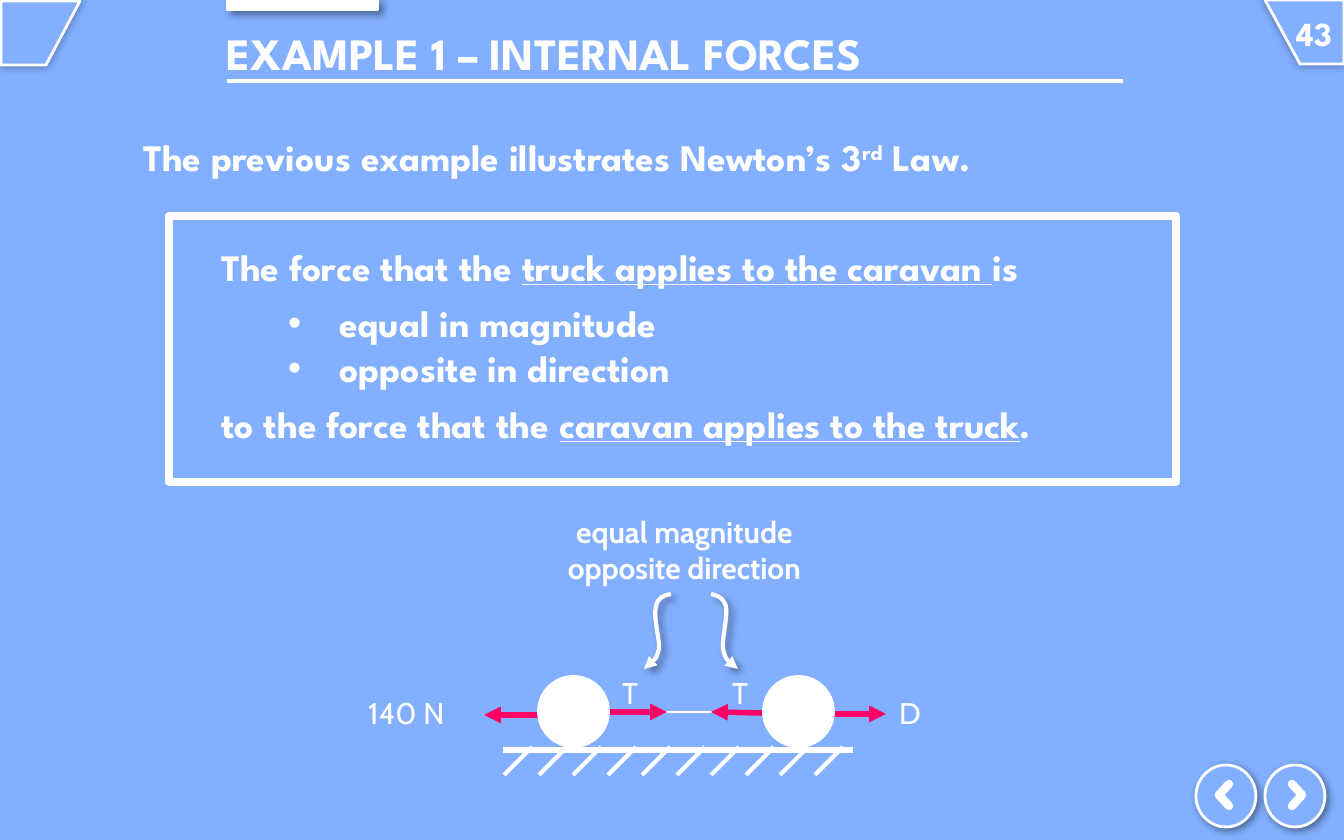
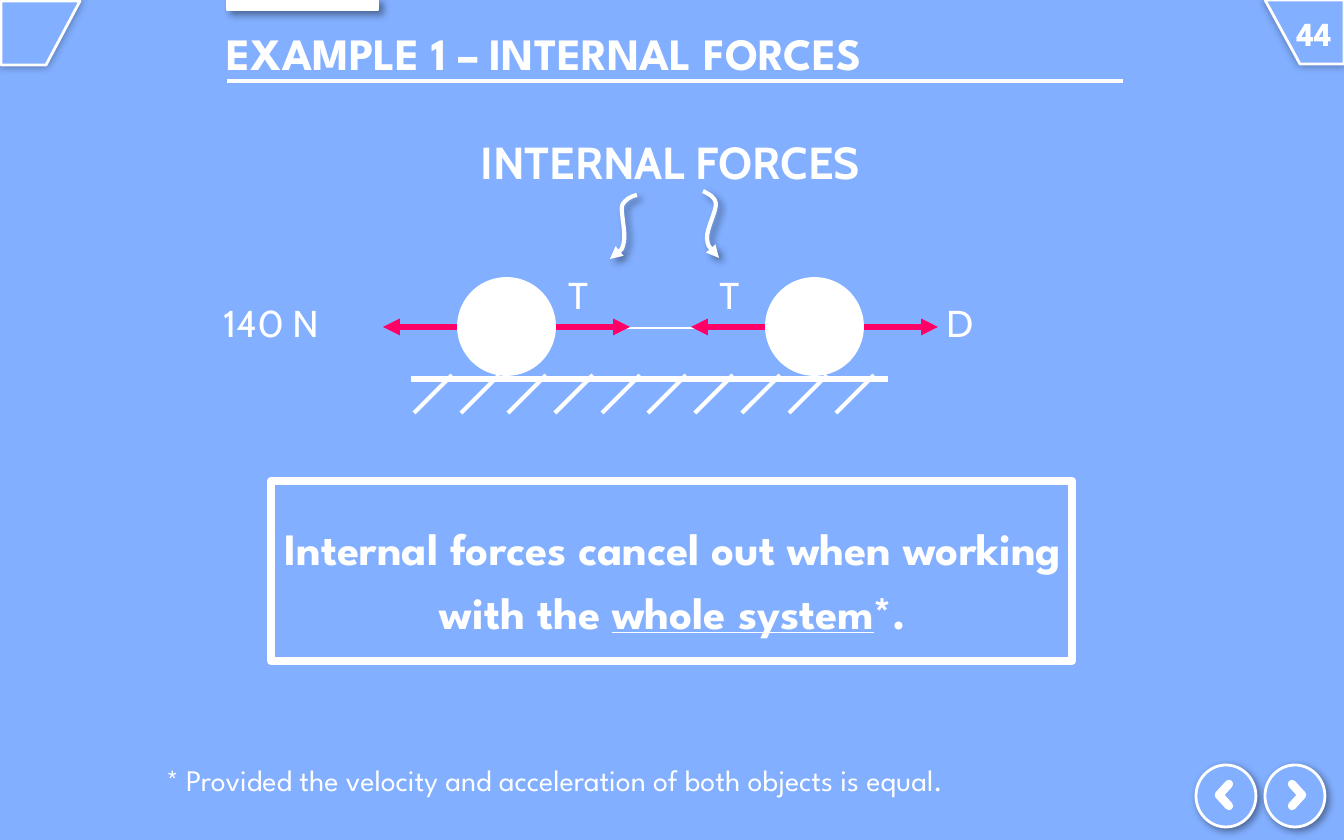
import dataclasses

import lxml.etree
import pptx
import pptx.dml.color
import pptx.enum.shapes
import pptx.enum.text
import pptx.oxml.ns
import pptx.util

PX = 914400 / 134.4
Pt = pptx.util.Pt
qn = pptx.oxml.ns.qn
Kind = pptx.enum.shapes.MSO_SHAPE
Align = pptx.enum.text.PP_ALIGN
Anchor = pptx.enum.text.MSO_ANCHOR
STRAIGHT = pptx.enum.shapes.MSO_CONNECTOR.STRAIGHT


@dataclasses.dataclass(frozen=True)
class Theme:
    sky = pptx.dml.color.RGBColor.from_string("82AFFF")
    white = pptx.dml.color.RGBColor.from_string("FFFFFF")
    force = pptx.dml.color.RGBColor.from_string("FF0066")
    heading = "League Spartan"
    label = "Cabin"
    title = 24
    body = 20
    number = 18
    note = 16


theme = Theme()


def finish(shape, width, line=theme.white, fill=None, shadow=None, arrow=False):
    shape.line.color.rgb = line
    shape.line.width = Pt(width)
    if fill is not None:
        shape.fill.solid()
        shape.fill.fore_color.rgb = fill
    elif hasattr(shape, "fill"):
        shape.fill.background()
    properties = shape._element.spPr
    outline = properties.find(qn("a:ln"))
    if arrow:
        lxml.etree.SubElement(outline, qn("a:tailEnd"), type="triangle")
    effects = lxml.etree.SubElement(properties, qn("a:effectLst"))
    if shadow:
        blur, distance, angle = shadow
        outer = lxml.etree.SubElement(
            effects, qn("a:outerShdw"), blurRad=str(blur * 12700),
            dist=str(distance * 12700), dir=str(angle * 60000), algn="tl", rotWithShape="0")
        black = lxml.etree.SubElement(outer, qn("a:srgbClr"), val="000000")
        lxml.etree.SubElement(black, qn("a:alpha"), val="40000")
    return outline


def write(page, bounds, paragraphs, size, name=theme.heading, bold=True, inset=True,
          anchor=Anchor.TOP, **layout):
    box = page.shapes.add_textbox(*(round(value * PX) for value in bounds))
    frame = box.text_frame
    frame.word_wrap = True
    frame.vertical_anchor = anchor
    if not inset:
        for side in ("left", "top", "right", "bottom"):
            setattr(frame, f"margin_{side}", 0)
    for index, (spans, style) in enumerate(paragraphs):
        para = frame.add_paragraph() if index else frame.paragraphs[0]
        style = {**layout, **style}
        if style.pop("bullet", False):
            settings = para._p.get_or_add_pPr()
            settings.set("marL", str(round(118 * PX)))
            settings.set("indent", str(round(-51 * PX)))
            lxml.etree.SubElement(settings, qn("a:buFont"), typeface="Arial")
            lxml.etree.SubElement(settings, qn("a:buChar"), char="•")
        for key, value in style.items():
            setattr(para, key, value)
        for text, mark in spans:
            span = para.add_run()
            span.text = text
            looks = {"name": name, "size": Pt(size), "bold": bold,
                     "underline": mark == "underline"}
            for key, value in looks.items():
                setattr(span.font, key, value)
            span.font.color.rgb = theme.white
            if mark == "superscript":
                span._r.get_or_add_rPr().set("baseline", "30000")


diagrams = [
    {
        "number": "43",
        "frame": (169, 216, 1007, 266),
        "ground": (503, 853, 750),
        "hatching": (532, 747, 28, 311),
        "rope": (609, 763, 712),
        "forces": [(539, 715, 484, 715), (832, 714, 886, 714),
                   (610, 712, 667, 712), (762, 713, 711, 712)],
        "bodies": [(538, 676), (763, 676)],
        "diameter": 71,
        "labels": [("140 N", 355, 688, 130), ("D", 886, 688, 51),
                   ("T", 609, 668, 47), ("T", 719, 668, 47)],
        "label_size": theme.note,
        "pointers": [
            [(671, 594), (664, 595), (657, 598), (656, 607), (653, 616), (660, 640),
             (659, 649), (656, 660), (650, 665), (644, 669)],
            [(711, 594), (716, 595), (723, 597), (726, 606), (728, 616), (722, 638),
             (723, 649), (726, 660), (731, 665), (738, 669)],
        ],
    },
    {
        "number": "44",
        "frame": (271, 481, 801, 180),
        "ground": (411, 888, 379),
        "hatching": (452, 375, 38, 422),
        "rope": (556, 766, 328),
        "forces": [(460, 327, 383, 327), (863, 327, 938, 327),
                   (555, 327, 630, 327), (767, 327, 691, 327)],
        "bodies": [(458, 278), (766, 278)],
        "diameter": 97,
        "labels": [("140 N", 210, 294, 156), ("D", 933, 294, 56),
                   ("T", 555, 266, 52), ("T", 706, 266, 52)],
        "label_size": theme.body,
        "pointers": [
            [(637, 195), (632, 196), (625, 199), (622, 206), (621, 214), (626, 233),
             (624, 242), (622, 251), (616, 255), (610, 259)],
            [(703, 191), (708, 194), (715, 196), (716, 204), (716, 212), (707, 228),
             (707, 238), (708, 247), (714, 253), (719, 258)],
        ],
    },
]
corner_tabs = [
    [(1344, 0), (1344, 64), (1300, 64), (1265, 0)],
    [(1, 1), (1, 65), (46, 65), (80, 1)],
]

deck = pptx.Presentation()
deck.slide_width = round(1344 * PX)
deck.slide_height = round(840 * PX)

for diagram in diagrams:
    page = deck.slides.add_slide(deck.slide_layouts[6])
    page.background.fill.solid()
    page.background.fill.fore_color.rgb = theme.sky

    for corners in corner_tabs:
        builder = page.shapes.build_freeform(*corners[0], scale=PX)
        builder.add_line_segments(corners[1:], close=True)
        finish(builder.convert_to_shape(), 1.5, fill=theme.sky, shadow=(5, 0, 0))
    write(page, (1284, 0, 60, 67), [([(diagram["number"], None)], {})], theme.number,
          inset=False, anchor=Anchor.MIDDLE, alignment=Align.CENTER)
    write(page, (227, 30, 868, 52), [([("EXAMPLE 1 – INTERNAL FORCES", None)], {})],
          theme.title, inset=False, anchor=Anchor.MIDDLE, line_spacing=0.9)

    hatch_x, hatch_y, hatch_size, hatch_span = diagram["hatching"]
    ground_left, ground_right, ground_y = diagram["ground"]
    rope_left, rope_right, rope_y = diagram["rope"]
    lines = [
        (227, 81, 1123, 81, 2.25, theme.white, False),
        (ground_left, ground_y, ground_right, ground_y, 3, theme.white, False),
        (rope_left, rope_y, rope_right, rope_y, 1.5, theme.white, False),
    ]
    for index in range(10):
        x = hatch_x + round(hatch_span * index / 9)
        lines.append((x, hatch_y, x - hatch_size, hatch_y + hatch_size, 2.25,
                      theme.white, False))
    lines += [(*ends, 3, theme.force, True) for ends in diagram["forces"]]
    for *ends, width, color, arrow in lines:
        line = page.shapes.add_connector(STRAIGHT, *(round(value * PX) for value in ends))
        finish(line, width, color, arrow=arrow)

    diameter = diagram["diameter"]
    shapes = [
        (Kind.RECTANGLE, (227, 0, 151, 10), theme.white, 1.5, (4, 3, 45)),
        (Kind.RECTANGLE, diagram["frame"], None, 4.5, None),
        (Kind.OVAL, (1196, 765, 60, 62), theme.sky, 1.5, (4, 2, 45)),
        (Kind.OVAL, (1265, 765, 60, 62), theme.sky, 1.5, (4, 2, 45)),
    ]
    shapes += [(Kind.OVAL, (*corner, diameter, diameter), theme.white, 1, None)
               for corner in diagram["bodies"]]
    for kind, bounds, fill, width, shadow in shapes:
        shape = page.shapes.add_shape(kind, *(round(value * PX) for value in bounds))
        finish(shape, width, fill=fill, shadow=shadow)

    for center, direction in ((1226, -1), (1295, 1)):
        for end_y in (784, 806):
            ends = (center - 3 * direction, end_y, center + 7 * direction, 795)
            chevron = page.shapes.add_connector(STRAIGHT, *(round(value * PX) for value in ends))
            finish(chevron, 4.5).set("cap", "rnd")

    for points in diagram["pointers"]:
        builder = page.shapes.build_freeform(*points[0], scale=PX)
        builder.add_line_segments(points[1:], close=False)
        pointer = builder.convert_to_shape()
        finish(pointer, 2.25, shadow=(4, 3, 45), arrow=True)
        segments = list(pointer._element.iter(qn("a:lnTo")))
        for first in range(0, len(segments), 3):
            curve = lxml.etree.Element(qn("a:cubicBezTo"))
            segments[first].addprevious(curve)
            for segment in segments[first:first + 3]:
                curve.append(segment[0])
                segment.getparent().remove(segment)

    for text, x, y, width in diagram["labels"]:
        write(page, (x, y, width, 55), [([(text, None)], {})], diagram["label_size"],
              theme.label, bold=False)

third_law, cancelling = deck.slides
write(third_law, (130, 128, 1031, 59), [
    ([("The previous example illustrates Newton’s 3", None), ("rd", "superscript"),
      (" Law.", None)], {}),
], theme.body)
write(third_law, (208, 238, 933, 218), [
    ([("The force that the ", None), ("truck applies to the caravan ", "underline"),
      ("is", None)], {"space_after": Pt(6)}),
    ([("equal in magnitude", None)], {"level": 1, "bullet": True}),
    ([("opposite in direction", None)], {"level": 1, "bullet": True}),
    ([("to the force that the ", None), ("caravan applies to the truck", "underline"),
      (".", None)], {"space_before": Pt(6)}),
], theme.body, alignment=Align.JUSTIFY)
write(third_law, (512, 507, 345, 86), [
    ([("equal magnitude", None)], {}),
    ([("opposite direction", None)], {}),
], theme.note, theme.label, alignment=Align.CENTER)

write(cancelling, (428, 128, 484, 67), [([("INTERNAL FORCES", None)], {})],
      theme.title, theme.label, alignment=Align.CENTER)
write(cancelling, (249, 503, 848, 137), [
    ([("Internal forces cancel out when working with the ", None),
      ("whole system", "underline"), ("*.", None)], {}),
], theme.title, alignment=Align.CENTER, line_spacing=1.2)
write(cancelling, (153, 755, 1103, 50), [
    ([("* Provided the velocity and acceleration of both objects is equal.", None)], {}),
], theme.note, bold=False)

deck.save("out.pptx")
